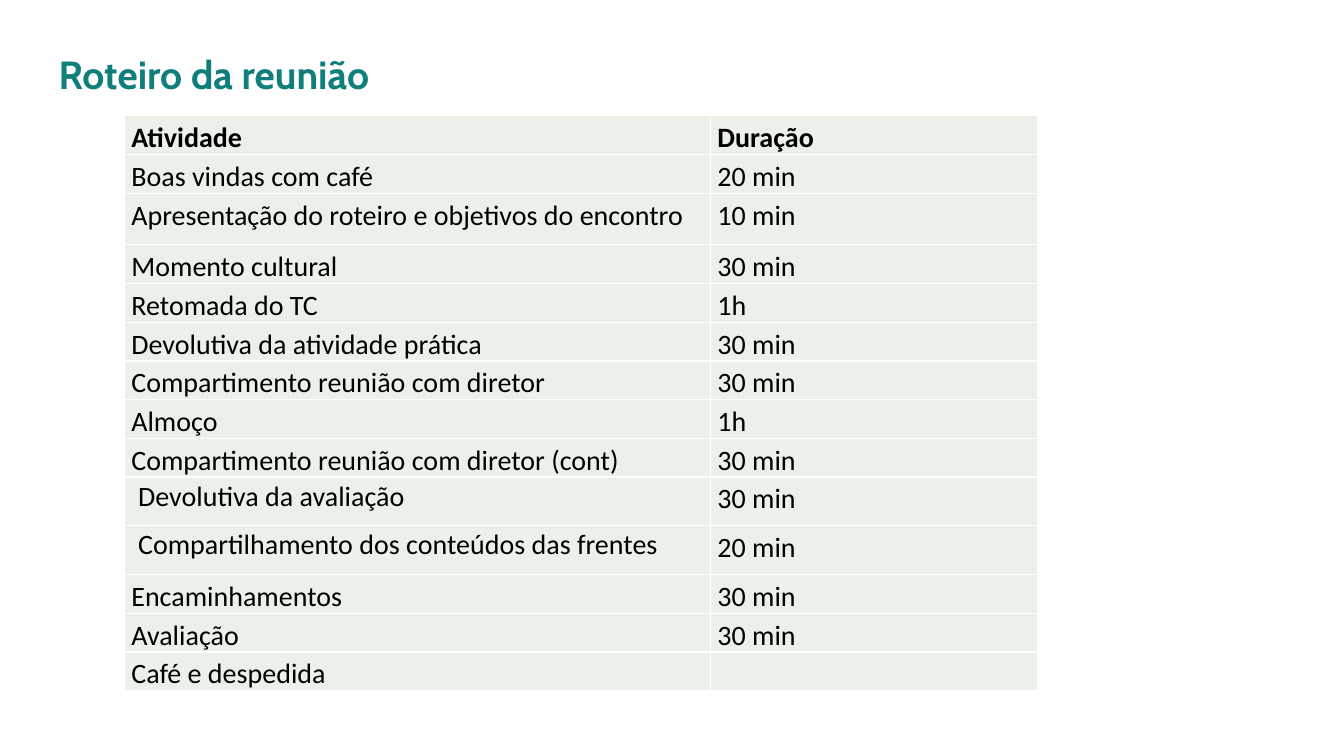
from pptx import Presentation
from pptx.dml.color import RGBColor
from pptx.enum.text import MSO_ANCHOR
from pptx.oxml import parse_xml
from pptx.oxml.ns import nsdecls
from pptx.util import Cm, Pt

MIDDLE = MSO_ANCHOR.MIDDLE

TITLE = "Roteiro da reunião"
AGENDA = [
    ("Atividade", "Duração"),
    ("Boas vindas com café", "20 min"),
    ("Apresentação do roteiro e objetivos do encontro", "10 min"),
    ("Momento cultural", "30 min"),
    ("Retomada do TC", "1h"),
    ("Devolutiva da atividade prática", "30 min"),
    ("Compartimento reunião com diretor", "30 min"),
    ("Almoço", "1h"),
    ("Compartimento reunião com diretor (cont)", "30 min"),
    ("Devolutiva da avaliação", "30 min"),
    ("Compartilhamento dos conteúdos das frentes", "20 min"),
    ("Encaminhamentos", "30 min"),
    ("Avaliação", "30 min"),
    ("Café e despedida", ""),
]
COLUMN_WIDTHS = (14.77, 8.24)
ROW_HEIGHT = 0.84
TALL_ROWS = {2: 1.3, 9: 1.22, 10: 1.24}
INDENTED_ROWS = (9, 10)


def color(value):
    return RGBColor.from_string(value)


def write(tf, text, font="Calibri", size=20, ink="000000", bold=False, spacing=1.0):
    p = tf.paragraphs[0]
    p.line_spacing = spacing
    p.font.size = Pt(size)
    if text:
        r = p.add_run()
        r.text = text
        r.font.name = font
        r.font.size = Pt(size)
        r.font.bold = bold
        r.font.color.rgb = color(ink)


def style_cell(cell, indented):
    cell.margin_left = Cm(0.34 if indented else 0.17)
    cell.margin_right = Cm(0.17)
    cell.margin_top = cell.margin_bottom = Cm(0)
    tc_pr = cell._tc.get_or_add_tcPr()
    for side in ("lnL", "lnR", "lnT", "lnB"):
        tc_pr.append(parse_xml(
            f'<a:{side} {nsdecls("a")} w="{Pt(1)}"><a:solidFill>'
            f'<a:srgbClr val="FFFFFF"/></a:solidFill></a:{side}>'))
    cell.fill.solid()
    cell.fill.fore_color.rgb = color("EBF1E9")


def main():
    prs = Presentation()
    prs.slide_width, prs.slide_height = Cm(33.87), Cm(19.05)
    s = prs.slides.add_slide(prs.slide_layouts[6])

    tf = s.shapes.add_textbox(Cm(1.14), Cm(0.84), Cm(30.53), Cm(2.06)).text_frame
    tf.word_wrap = True
    tf.vertical_anchor = MIDDLE
    tf.margin_left = tf.margin_right = tf.margin_top = tf.margin_bottom = Cm(0.34)
    write(tf, TITLE, font="Cabin", size=28, ink="107F7B", bold=True)

    heights = [TALL_ROWS.get(i, ROW_HEIGHT) for i in range(len(AGENDA))]
    table = s.shapes.add_table(
        len(AGENDA), len(COLUMN_WIDTHS), Cm(3.14), Cm(2.92),
        Cm(sum(COLUMN_WIDTHS)), Cm(sum(heights))).table
    for column, width in zip(table.columns, COLUMN_WIDTHS):
        column.width = Cm(width)
    for i, (row, texts) in enumerate(zip(table.rows, AGENDA)):
        row.height = Cm(heights[i])
        for j, (cell, text) in enumerate(zip(row.cells, texts)):
            indented = j == 0 and i in INDENTED_ROWS
            style_cell(cell, indented)
            write(cell.text_frame, text, bold=i == 0,
                  spacing=1.07 if indented else 1.15)

    prs.save("out.pptx")


if __name__ == "__main__":
    main()
